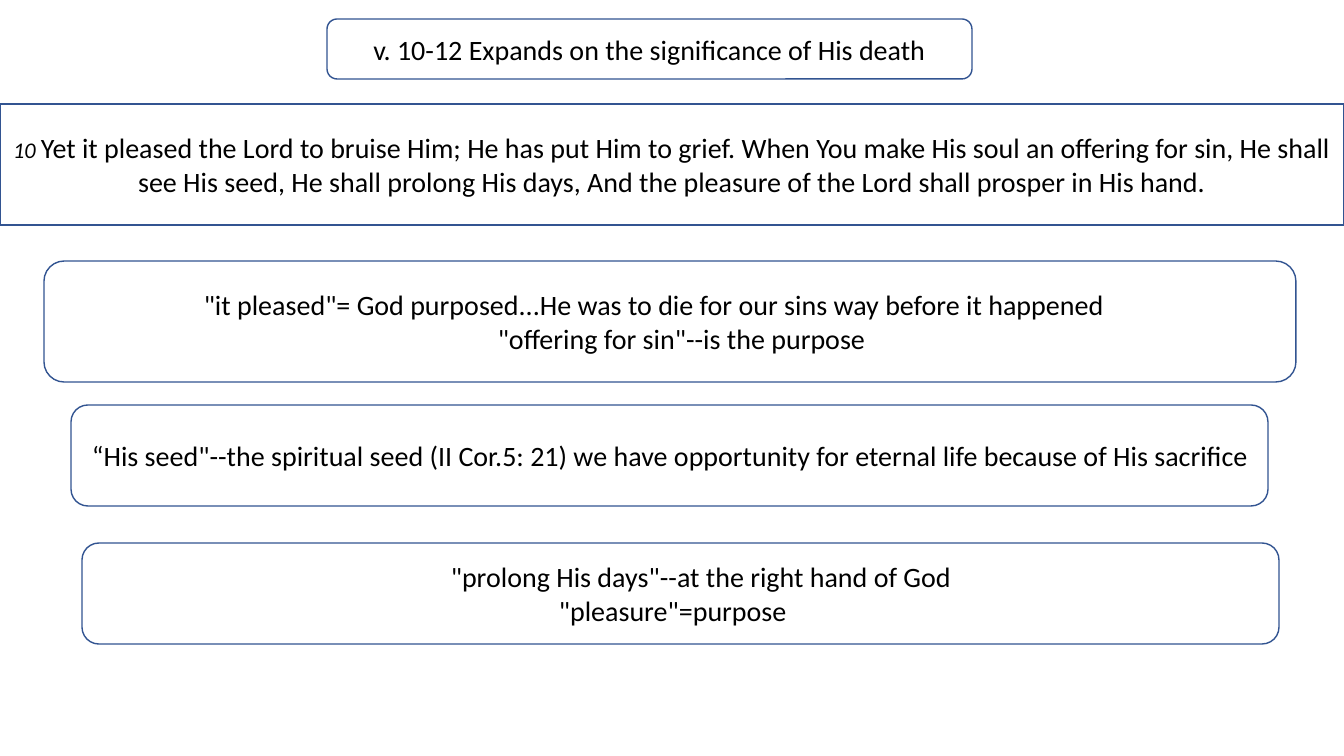
from pptx import Presentation
from pptx import util as u
from pptx.dml import color
from pptx.enum import shapes, text

PX = 9144000 / 1008  # EMU in one px

BODY = {"name": "Calibri", "size": u.Pt(20), "italic": False}
VERSE_NUMBER = {**BODY, "size": u.Pt(16), "italic": True}

RECT = shapes.MSO_SHAPE.RECTANGLE
ROUNDED = shapes.MSO_SHAPE.ROUNDED_RECTANGLE


def px(length):
    return u.Emu(round(length * PX))


def rgb(value):
    return color.RGBColor.from_string(value)


def add_box(page, kind, left, top, width, height):
    """Add a white box with a blue outline and return its text frame."""
    box = page.shapes.add_shape(kind, px(left), px(top), px(width), px(height))
    box.shadow.inherit = False
    box.fill.solid()
    box.fill.fore_color.rgb = rgb("FFFFFF")
    box.line.color.rgb = rgb("325491")
    box.line.width = u.Pt(1)
    frame = box.text_frame
    frame.word_wrap = True
    frame.vertical_anchor = text.MSO_ANCHOR.MIDDLE
    return frame


def add_span(para, words, look=BODY):
    span = para.add_run()
    span.text = words
    span.font.color.rgb = rgb("000000")
    for name, value in look.items():
        setattr(span.font, name, value)


def add_centred(frame, *spans):
    para = frame.paragraphs[0]
    para.alignment = text.PP_ALIGN.CENTER
    for words, look in spans:
        add_span(para, words, look)


def add_notes_box(page, place, lines):
    """Add a rounded box whose left-aligned lines each have an own indent."""
    frame = add_box(page, ROUNDED, *place)
    for number, (indent, words) in enumerate(lines):
        para = frame.add_paragraph() if number else frame.paragraphs[0]
        para.alignment = text.PP_ALIGN.LEFT
        para._p.get_or_add_pPr().set("marL", str(px(indent)))
        add_span(para, words)


def main():
    deck = Presentation()
    deck.slide_width, deck.slide_height = px(1344), px(756)
    page = deck.slides.add_slide(deck.slide_layouts[6])

    # Verse across the full width
    add_centred(
        add_box(page, RECT, 0, 104, 1344, 121),
        ("10 ", VERSE_NUMBER),
        ("Yet it pleased the Lord to bruise Him; He has put Him to grief. "
         "When You make His soul an offering for sin, He shall see His seed, "
         "He shall prolong His days, And the pleasure of the Lord shall "
         "prosper in His hand.", BODY))

    # Title
    add_centred(
        add_box(page, ROUNDED, 327, 19, 645, 60),
        ("v. 10-12 Expands on the significance of His death", BODY))

    # Explanations of the phrases
    add_notes_box(page, (44, 261, 1252, 121), [
        (144, '"it pleased"= God purposed...He was to die for our sins way '
              'before it happened'),
        (438, '"offering for sin"--is the purpose')])
    add_notes_box(page, (71, 405, 1197, 101), [
        (6, '“His seed"--the spiritual seed (II Cor.5: 21) we have '
            'opportunity for eternal life because of His sacrifice')])
    add_notes_box(page, (82, 543, 1197, 101), [
        (354, '"prolong His days"--at the right hand of God'),
        (462, '"pleasure"=purpose')])

    deck.save("out.pptx")


if __name__ == "__main__":
    main()
